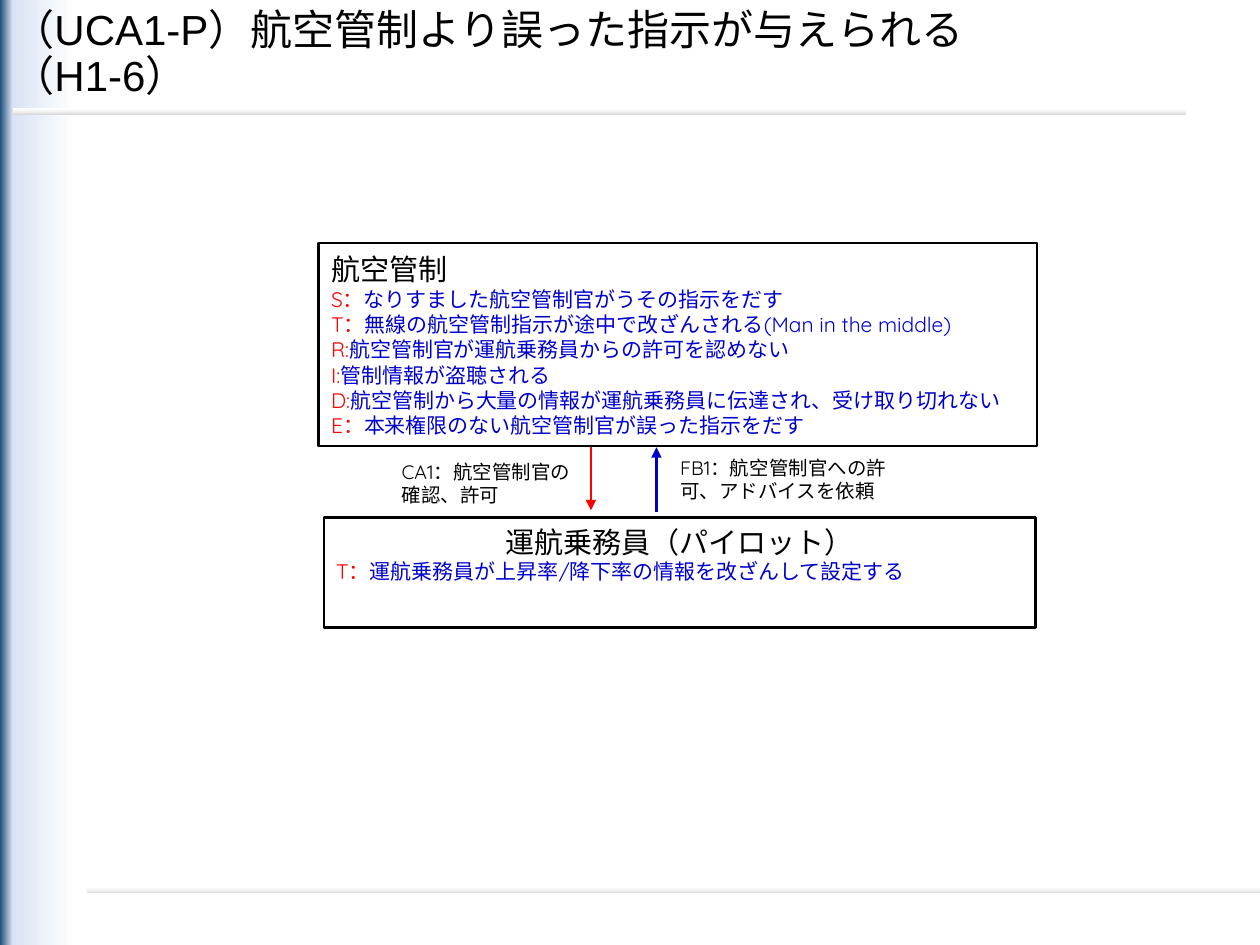
from dataclasses import dataclass

from lxml.etree import SubElement
from pptx import Presentation
from pptx.dml.color import RGBColor as RGB
from pptx.enum.shapes import MSO_CONNECTOR as Link, MSO_SHAPE as Form
from pptx.enum.text import MSO_ANCHOR as Anchor, PP_ALIGN as Align
from pptx.oxml.ns import qn
from pptx.util import Inches, Pt


@dataclass(frozen=True)
class Theme:
    black: str = "000000"
    red: str = "FF0000"
    blue: str = "0000CC"
    page: tuple = ((0, "1F4E79"), (1, "DAE3F3"), (6, "FFFFFF"))
    rule: tuple = ((0, "D9D9D9"), (48, "F2F2F2"), (100, "FFFFFF"))
    sans: str = "Arial"
    body: str = "Quicksand"
    title: float = 24
    head: float = 16.6
    item: float = 12
    label: float = 11.1
    line: float = 1.5


class Board:
    def __init__(self, slide, theme):
        self.slide = slide
        self.theme = theme

    def blend(self, fill, root, stops, angle):
        fill.gradient()
        fill.gradient_angle = angle
        group = next(root.iter(qn("a:gsLst")))
        for old in list(group):
            group.remove(old)
        for place, color in stops:
            stop = SubElement(group, qn("a:gs"), pos=str(place * 1000))
            SubElement(stop, qn("a:srgbClr"), val=color)

    def page(self):
        self.blend(self.slide.background.fill, self.slide._element,
                   self.theme.page, 0)

    def rect(self, *area):
        shape = self.slide.shapes.add_shape(Form.RECTANGLE, *map(Inches, area))
        shape.shadow.inherit = False
        return shape

    def rule(self, left, top):
        shape = self.rect(left, top, 9.31, 0.05)
        shape.line.fill.background()
        self.blend(shape.fill, shape._element, self.theme.rule, 90)

    def font(self, font, size, color, name=None):
        font.name = name or self.theme.body
        font.size = Pt(size)
        font.color.rgb = RGB.from_string(color)

    def text(self, area, words, size, name=None, anchor=Anchor.TOP):
        frame = self.slide.shapes.add_textbox(*map(Inches, area)).text_frame
        frame.word_wrap = True
        frame.vertical_anchor = anchor
        para = frame.paragraphs[0]
        para.text = words
        self.font(para.font, size, self.theme.black, name)
        return para

    def box(self, area, head, items, align, anchor):
        look = self.theme
        shape = self.rect(*area)
        shape.fill.background()
        shape.line.color.rgb = RGB.from_string(look.black)
        shape.line.width = Pt(look.line)
        frame = shape.text_frame
        frame.word_wrap = True
        frame.vertical_anchor = anchor
        para = frame.paragraphs[0]
        para.text = head
        para.alignment = align
        self.font(para.font, look.head, look.black)
        for key, words in items:
            para = frame.add_paragraph()
            para.alignment = Align.LEFT
            for part, color in ((key, look.red), (words, look.blue)):
                run = para.add_run()
                run.text = part
                self.font(run.font, look.item, color)

    def arrow(self, x, start, end, color):
        link = self.slide.shapes.add_connector(
            Link.STRAIGHT, *map(Inches, (x, start, x, end)))
        link.line.color.rgb = RGB.from_string(color)
        link.line.width = Pt(self.theme.line)
        SubElement(link.line._get_or_add_ln(), qn("a:tailEnd"), type="triangle")
        SubElement(link._element.spPr, qn("a:effectLst"))


def main():
    deck = Presentation()
    deck.slide_width, deck.slide_height = Inches(10), Inches(7.5)
    look = Theme()
    board = Board(deck.slides.add_slide(deck.slide_layouts[6]), look)

    # Background and rules
    board.page()
    board.rule(0.69, 7.04)
    board.rule(0.1, 0.86)

    # Title
    title = board.text((0, 0.12, 7.95, 0.63),
                       "（UCA1-P）航空管制より誤った指示が与えられる（H1-6）",
                       look.title, look.sans, Anchor.MIDDLE)
    title.line_spacing = 0.9

    # Pilot and control boxes
    board.box((2.57, 4.11, 5.65, 0.87), "運航乗務員（パイロット）",
              [("T：", "運航乗務員が上昇率/降下率の情報を改ざんして設定する")],
              Align.CENTER, Anchor.TOP)
    threats = [
        ("S：", "なりすました航空管制官がうその指示をだす"),
        ("T：", "無線の航空管制指示が途中で改ざんされる(Man in the middle)"),
        ("R:", "航空管制官が運航乗務員からの許可を認めない"),
        ("I:", "管制情報が盗聴される"),
        ("D:", "航空管制から大量の情報が運航乗務員に伝達され、受け取り切れない"),
        ("E：", "本来権限のない航空管制官が誤った指示をだす"),
    ]
    board.box((2.53, 1.93, 5.7, 1.61), "航空管制", threats,
              Align.LEFT, Anchor.MIDDLE)

    # Control action and feedback
    board.arrow(4.69, 3.55, 4.05, look.red)
    board.arrow(5.21, 4.06, 3.55, look.blue)
    board.text((3.09, 3.6, 1.63, 0.47), "CA1：航空管制官の確認、許可", look.label)
    board.text((5.3, 3.57, 1.88, 0.47),
               "FB1：航空管制官への許可、アドバイスを依頼", look.label)

    deck.save("out.pptx")


if __name__ == "__main__":
    main()
